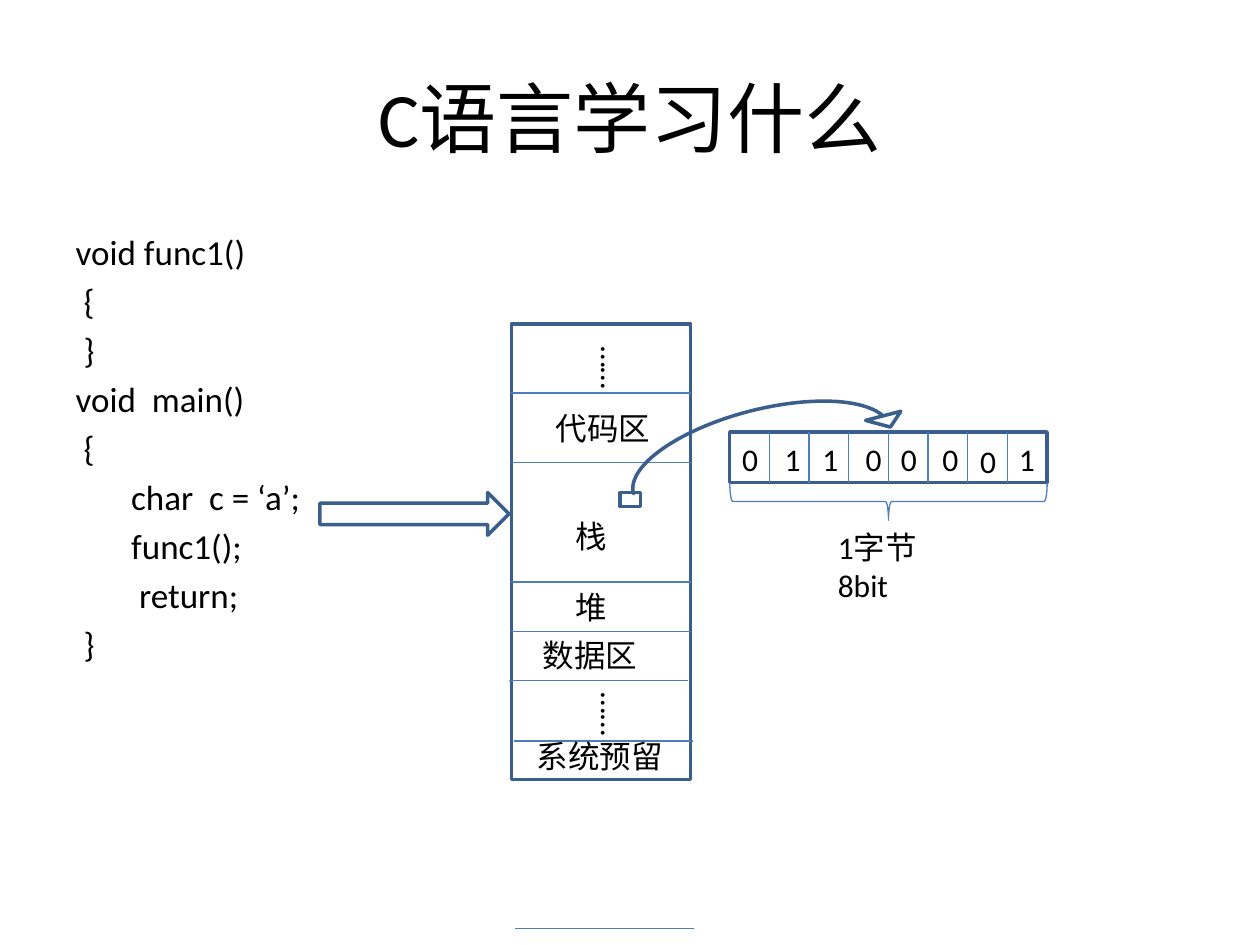
from pptx import Presentation
from pptx.dml.color import RGBColor
from pptx.enum.shapes import MSO_CONNECTOR, MSO_SHAPE
from pptx.enum.text import MSO_ANCHOR, PP_ALIGN
from pptx.oxml.ns import qn
from pptx.util import Cm, Pt
from lxml import etree

LINE = MSO_CONNECTOR.STRAIGHT
RECT = MSO_SHAPE.RECTANGLE
ARROW = MSO_SHAPE.RIGHT_ARROW
CURVE = MSO_SHAPE.CURVED_DOWN_ARROW
BRACE = MSO_SHAPE.RIGHT_BRACE

FONT = "Calibri"
HEX = {"text": "000000", "frame": "3A5F8C", "rule": "4B7EBC"}

TITLE = "C语言学习什么"
# text, left indent in cm
CODE = [
    ("void func1()", 0),
    ("{", 0.16),
    ("}", 0.16),
    ("void  main()", 0),
    ("{", 0.16),
    ("char  c = ‘a’;", 1.12),
    ("func1();", 1.12),
    ("return;", 1.28),
    ("}", 0.16),
]

# Memory column: left, top, width, height in cm
MEM = (10.31, 6.53, 3.61, 9.19)
# left, top of each rule
RULES = [(10.31, 7.92), (10.31, 9.32), (10.31, 11.73), (10.31, 12.73),
         (10.26, 13.72), (10.36, 14.94), (10.39, 18.72)]
# text, left, top, width
AREAS = [
    ("代码区", 10.95, 8.13, 2.44),
    ("栈", 11.35, 10.29, 1.14),
    ("堆", 11.35, 11.73, 1.14),
    ("数据区", 10.69, 12.7, 2.44),
    ("系统预留", 10.57, 14.73, 3.07),
    ("1字节\v8bit", 16.64, 10.52, 3.15),
]
GAPS = [(11.61, 6.73), (11.61, 13.72)]

BYTE = (14.71, 8.71, 6.4, 1.02)
# digit, left, top
BITS = [("0", 14.71, 8.74), ("1", 15.57, 8.74), ("1", 16.33, 8.74),
        ("0", 17.2, 8.74), ("0", 17.91, 8.74), ("0", 18.75, 8.74),
        ("0", 19.51, 8.79), ("1", 20.29, 8.74)]


def tint(name):
    return RGBColor.from_string(HEX[name])


def style(para, size):
    para.font.size = Pt(size)
    para.font.name = FONT
    para.font.color.rgb = tint("text")


def place(shape, box):
    shape.left, shape.top, shape.width, shape.height = map(Cm, box)


def outline(kind, box, color="frame", width=2, turn=0):
    shape = slide.shapes.add_shape(kind, *map(Cm, box))
    shape.shadow.inherit = False
    shape.fill.background()
    shape.line.color.rgb = tint(color)
    shape.line.width = Pt(width)
    shape.rotation = turn
    return shape


def rule(x1, y1, x2, y2):
    line = slide.shapes.add_connector(LINE, *map(Cm, (x1, y1, x2, y2)))
    line.line.color.rgb = tint("rule")
    line.line.width = Pt(0.75)
    etree.SubElement(line._element.spPr, qn("a:effectLst"))


def label(text, left, top, width, height=1.02, wrap=False):
    frame = slide.shapes.add_textbox(
        *map(Cm, (left, top, width, height))).text_frame
    frame.word_wrap = wrap
    frame.text = text
    style(frame.paragraphs[0], 18)
    return frame


deck = Presentation()
deck.slide_width, deck.slide_height = Cm(25.4), Cm(19.05)
slide = deck.slides.add_slide(deck.slide_layouts[1])

# Title and code
title, body = slide.placeholders
place(title, (1.27, 0.76, 22.86, 3.18))
title.text_frame.text = TITLE
title.text_frame.vertical_anchor = MSO_ANCHOR.MIDDLE
head = title.text_frame.paragraphs[0]
head.alignment = PP_ALIGN.CENTER
style(head, 44)

place(body, (1.27, 4.52, 22.86, 12.57))
frame = body.text_frame
frame.text = "\n".join(text for text, _ in CODE)
for para, (_, indent) in zip(frame.paragraphs, CODE):
    style(para, 20)
    props = para._p.get_or_add_pPr()
    props.set("marL", str(Cm(indent)))
    props.set("indent", "0")
    bullet = etree.Element(qn("a:buNone"))
    props.insert_element_before(bullet, "a:tabLst", "a:defRPr", "a:extLst")

# Memory column
outline(ARROW, (6.45, 9.93, 3.81, 0.86))
outline(RECT, MEM)
for left, top in RULES:
    rule(left, top, left + MEM[2], top)
for area in AREAS:
    label(*area)
for left, top in GAPS:
    dots = label("……", left, top, 1.27, 1.14)
    dots._txBody.bodyPr.set("vert", "eaVert")

# One byte, taken from the stack
outline(RECT, (12.5, 9.93, 0.41, 0.28))
curve = outline(CURVE, (12.55, 8.23, 5.72, 1.02), turn=345.5)
for i, value in enumerate((0, 0.72, 0.25)):
    curve.adjustments[i] = value
outline(RECT, BYTE)
left, top, width, height = BYTE
for i in range(1, len(BITS)):
    x = left + i * width / len(BITS)
    rule(x, top, x, top + height)
for digit, x, y in BITS:
    label(digit, x, y, 0.61, wrap=True)
outline(BRACE, (17.53, 6.91, 0.76, 6.4), "rule", 0.75, 90)

deck.save("out.pptx")
